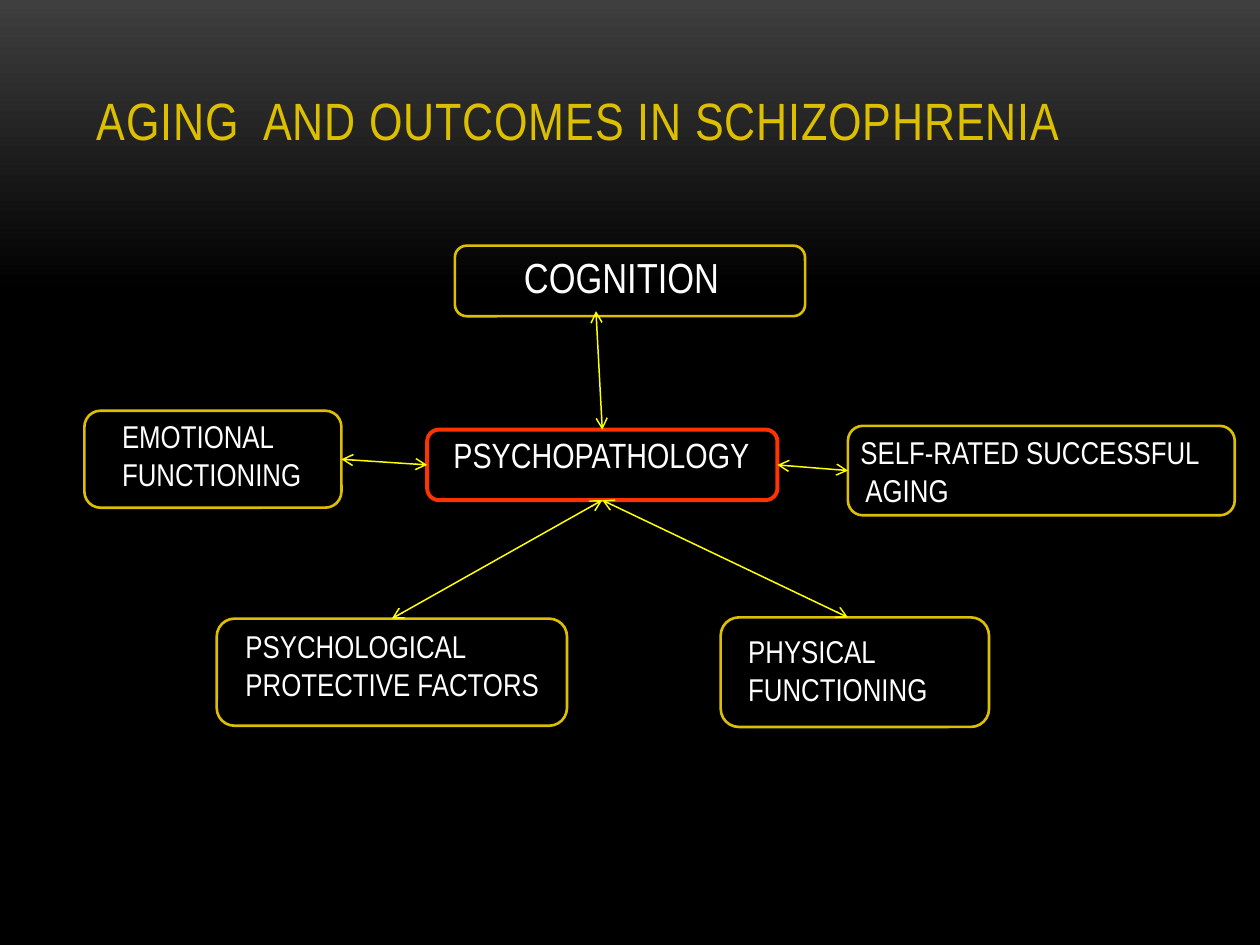
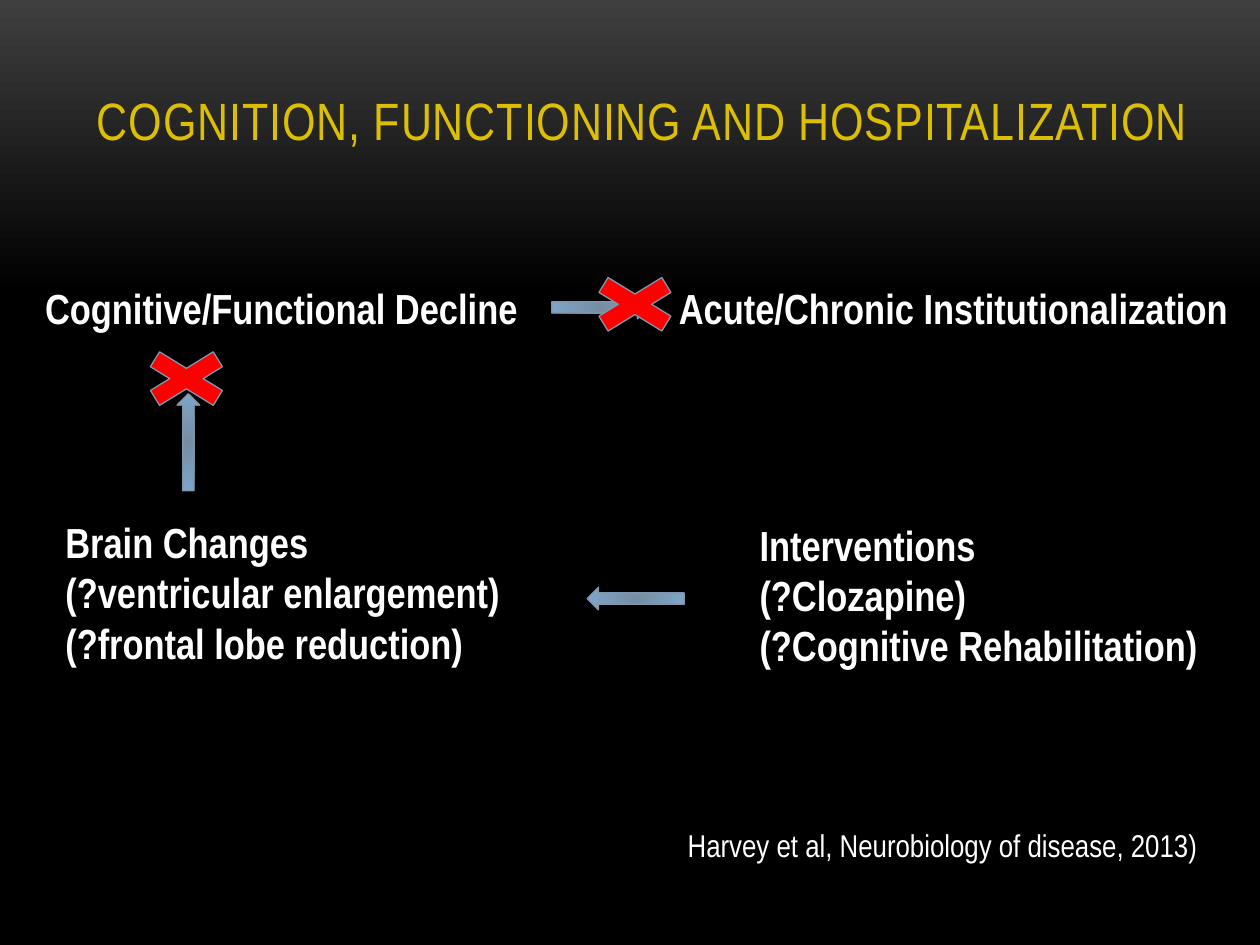
import pptx
import pptx.util
import pptx.dml.color
import pptx.enum.shapes
import pptx.enum.text
import pptx.oxml
import pptx.oxml.ns
import lxml.etree


class Theme:
    face = "Arial Narrow"
    gold, red, cross, wire = "DCBF00", "FF3300", "FF0000", "FFFF00"
    white, black, grey, edge = "FFFFFF", "000000", "3F3F3F", "7E97AD"
    steel = ("758DA1", "7FA6CA")
    head, big, mid, small = 30, 24, 20, 18


Kind = pptx.enum.shapes.MSO_SHAPE
Join = pptx.enum.shapes.MSO_CONNECTOR
Anchor = pptx.enum.text.MSO_ANCHOR
color = pptx.dml.color.RGBColor.from_string
qn = pptx.oxml.ns.qn
cell = pptx.util.Inches(0.1)
cols, rows = 100, 75


def text(slide, box, lines, size, tint=Theme.white, bold=False, anchor=Anchor.TOP):
    frame = slide.shapes.add_textbox(*[round(n * cell) for n in box]).text_frame
    frame.word_wrap = True
    frame.vertical_anchor = anchor
    frame.text = lines
    form = {"name": Theme.face, "size": pptx.util.Pt(size), "bold": bold}
    for par in frame.paragraphs:
        for run in par.runs:
            for key, val in form.items():
                setattr(run.font, key, val)
            run.font.color.rgb = color(tint)
    return frame


def shape(slide, kind, box, edge, width, turn=0):
    item = slide.shapes.add_shape(kind, *[round(n * cell) for n in box])
    item.shadow.inherit = False
    item.rotation = turn
    item.fill.background()
    item.line.color.rgb = color(edge)
    item.line.width = pptx.util.Pt(width)
    return item


deck = pptx.Presentation()
deck.slide_width, deck.slide_height = cols * cell, rows * cell

heads = ["AGING  AND OUTCOMES IN SCHIZOPHRENIA", "COGNITION, FUNCTIONING AND HOSPITALIZATION"]
pages = []
for title in heads:
    page = deck.slides.add_slide(deck.slide_layouts[6])
    fill = page.background.fill
    fill.gradient()
    fill.gradient_angle = 270
    for stop, tint, place in zip(fill.gradient_stops, (Theme.grey, Theme.black), (0, 0.31)):
        stop.color.rgb = color(tint)
        stop.position = place
    frame = text(page, (6.7, 0, 91.4, 12.5), title, Theme.head, Theme.gold, anchor=Anchor.BOTTOM)
    frame.paragraphs[0].runs[0].font._element.set("spc", "50")
    pages.append(page)
model, chain = pages

nodes = {
    "mind": (36.1, 19.5, 27.8, 5.6),
    "body": (57.2, 49, 21.3, 8.7),
    "guard": (17.2, 49.1, 27.8, 8.5),
    "aging": (67.3, 33.8, 30.7, 7.1),
    "mood": (6.7, 32.6, 20.4, 7.7),
    "core": (33.9, 34.1, 27.8, 5.6),
}
for name, box in nodes.items():
    core = name == "core"
    nodes[name] = shape(model, Kind.ROUNDED_RECTANGLE, box,
                        Theme.red if core else Theme.gold, 2.25 if core else 1.5)

labels = [
    ((40.6, 19.5, 18.5, 5), "COGNITION", Theme.big),
    ((8.7, 32.6, 17.5, 7.1), "EMOTIONAL\nFUNCTIONING", Theme.small),
    ((18.5, 49.3, 26, 7.1), "PSYCHOLOGICAL\nPROTECTIVE FACTORS", Theme.small),
    ((58.4, 49.7, 19, 7.1), "PHYSICAL\nFUNCTIONING", Theme.small),
    ((67.3, 33.9, 29.8, 7.1), "SELF-RATED SUCCESSFUL\nAGING", Theme.small),
    ((35, 33.9, 26.2, 4.4), "PSYCHOPATHOLOGY", Theme.mid),
]
for box, words, size in labels:
    frame = text(model, box, words, size)
    if words.endswith("\nAGING"):
        frame.paragraphs[1]._p.get_or_add_pPr().set("marL", str(round(0.4 * cell)))

links = [
    (None, (47.3, 24.7), "core", 0, (47.8, 34.1)),
    (("mood", 3), (27.1, 36.5), "core", 1, (33.9, 36.9)),
    (("aging", 1), (67.3, 37.4), "core", 3, (61.7, 36.9)),
    (("guard", 0), (31.1, 49.1), "core", 2, (47.8, 39.7)),
    (None, (67.3, 49), "core", 2, (47.8, 39.7)),
]
for start, here, goal, side, there in links:
    wire = model.shapes.add_connector(Join.STRAIGHT, *[round(n * cell) for n in here + there])
    if start:
        wire.begin_connect(nodes[start[0]], start[1])
    wire.end_connect(nodes[goal], side)
    wire.line.color.rgb = color(Theme.wire)
    wire.line.width = pptx.util.Pt(0.85)
    for end in ("a:headEnd", "a:tailEnd"):
        lxml.etree.SubElement(wire.line._get_or_add_ln(), qn(end), type="arrow")
    lxml.etree.SubElement(wire._element.spPr, qn("a:effectLst"))

notes = [
    ((2.6, 21.9, 97.4, 5), "Cognitive/Functional Decline\tAcute/Chronic Institutionalization", Theme.big, True),
    ((4.2, 40.5, 37.2, 13.1), "Brain Changes\n(?ventricular enlargement)\n(?frontal lobe reduction)", Theme.big, True),
    ((59.3, 40.7, 37.6, 13.1), "Interventions\n(?Clozapine)\n(?Cognitive Rehabilitation)", Theme.big, True),
    ((53.6, 65.1, 43.4, 4), "Harvey et al, Neurobiology of disease, 2013)", Theme.small, False),
]
for box, words, size, bold in notes:
    frame = text(chain, box, words, size, bold=bold)
    if "\t" in words:
        tabs = lxml.etree.SubElement(frame.paragraphs[0]._p.get_or_add_pPr(), qn("a:tabLst"))
        lxml.etree.SubElement(tabs, qn("a:tab"), pos=str(round(50.3 * cell)), algn="l")

for left, top, turn in [(43.8, 23.5, 0), (11.1, 34.2, 270), (46.6, 46.6, 180)]:
    arrow = shape(chain, Kind.RIGHT_ARROW, (left, top, 7.7, 1.8), Theme.edge, 0.75, turn)
    arrow.fill.gradient()
    for stop, tint in zip(arrow.fill.gradient_stops, Theme.steel):
        stop.color.rgb = color(tint)
    grad = arrow._element.spPr.find(qn("a:gradFill"))
    grad.remove(grad.find(qn("a:lin")))
    ring = lxml.etree.SubElement(grad, qn("a:path"), path="circle")
    lxml.etree.SubElement(ring, qn("a:fillToRect"), {side: "100000" for side in "ltrb"})

for left, top in [(10, 27.1), (45.6, 21.2)]:
    cross = shape(chain, Kind.MATH_MULTIPLY, (left, top, 9.6, 5.9), Theme.edge, 0.75)
    cross.fill.solid()
    cross.fill.fore_color.rgb = color(Theme.cross)

deck.save("out.pptx")
